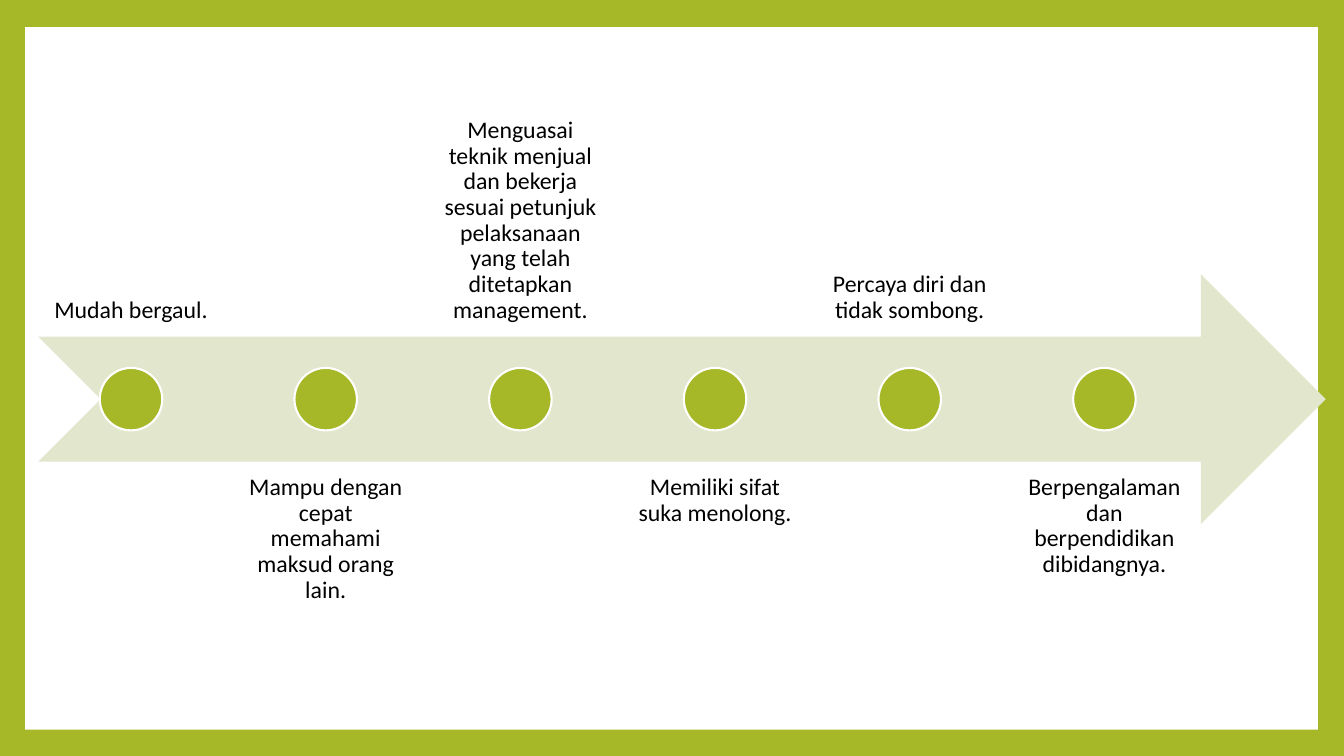
from pptx import Presentation
from pptx.dml.color import RGBColor
from pptx.enum.shapes import MSO_SHAPE
from pptx.enum.text import MSO_ANCHOR, PP_ALIGN
from pptx.util import Inches, Pt

GREEN = RGBColor(0xA6, 0xB7, 0x27)
PALE = RGBColor(0xE1, 0xE6, 0xCD)
WHITE = RGBColor(0xFF, 0xFF, 0xFF)
BLACK = RGBColor(0, 0, 0)

WIDE, HIGH = 13.33, 7.5
PANEL = (0.25, 0.27, 12.82, 6.97)
FLOW = (0.38, 0.86, 12.77, 6.2)

TRAITS = [
    "Mudah bergaul.",
    "Mampu dengan cepat memahami maksud orang lain.",
    "Menguasai teknik menjual dan bekerja sesuai petunjuk pelaksanaan "
    "yang telah ditetapkan management.",
    "Memiliki sifat suka menolong.",
    "Percaya diri dan tidak sombong.",
    "Berpengalaman dan berpendidikan dibidangnya.",
]
INSET = Inches(0.13)
FRAME = {"word_wrap": True, "margin_left": INSET, "margin_right": INSET,
         "margin_top": INSET, "margin_bottom": INSET}
PARA = {"alignment": PP_ALIGN.CENTER, "line_spacing": 0.9, "space_after": Pt(6)}
FONT = {"name": "Calibri", "size": Pt(17)}


def style(item, values):
    for name, value in values.items():
        setattr(item, name, value)


def add_form(slide, kind, box, fill, edge=None):
    form = slide.shapes.add_shape(kind, *map(Inches, box))
    form.shadow.inherit = False
    form.fill.solid()
    form.fill.fore_color.rgb = fill
    if edge is None:
        form.line.fill.background()
    else:
        form.line.color.rgb = edge
        form.line.width = Pt(1.5)


def add_label(slide, box, text, anchor):
    frame = slide.shapes.add_textbox(*map(Inches, box)).text_frame
    style(frame, FRAME | {"vertical_anchor": anchor})
    para = frame.paragraphs[0]
    style(para, PARA)
    run = para.add_run()
    run.text = text
    style(run.font, FONT)
    run.font.color.rgb = BLACK


def add_flow(slide, box, traits):
    """Arrow with one dot per trait, labels alternating above and below."""
    left, top, width, height = box
    band, dot = 0.4 * height, 0.1 * height
    add_form(slide, MSO_SHAPE.NOTCHED_RIGHT_ARROW,
             (left, top + 0.3 * height, width, band), PALE)

    # Columns fill 90% of the width, with gaps of 5% of a column.
    count = len(traits)
    col = 0.9 * width / (count + 0.05 * (count - 1))
    for i, text in enumerate(traits):
        x = left + 1.05 * col * i
        below = i % 2 == 1
        y = top + 0.6 * height if below else top
        anchor = MSO_ANCHOR.TOP if below else MSO_ANCHOR.BOTTOM
        add_label(slide, (x, y, col, band), text, anchor)
        add_form(slide, MSO_SHAPE.OVAL,
                 (x + (col - dot) / 2, top + (height - dot) / 2, dot, dot),
                 GREEN, WHITE)


def main():
    deck = Presentation()
    style(deck, {"slide_width": Inches(WIDE), "slide_height": Inches(HIGH)})
    slide = deck.slides.add_slide(deck.slide_layouts[6])
    back = slide.background.fill
    back.solid()
    back.fore_color.rgb = GREEN
    add_form(slide, MSO_SHAPE.RECTANGLE, PANEL, WHITE)
    add_flow(slide, FLOW, TRAITS)
    deck.save("out.pptx")


if __name__ == "__main__":
    main()
